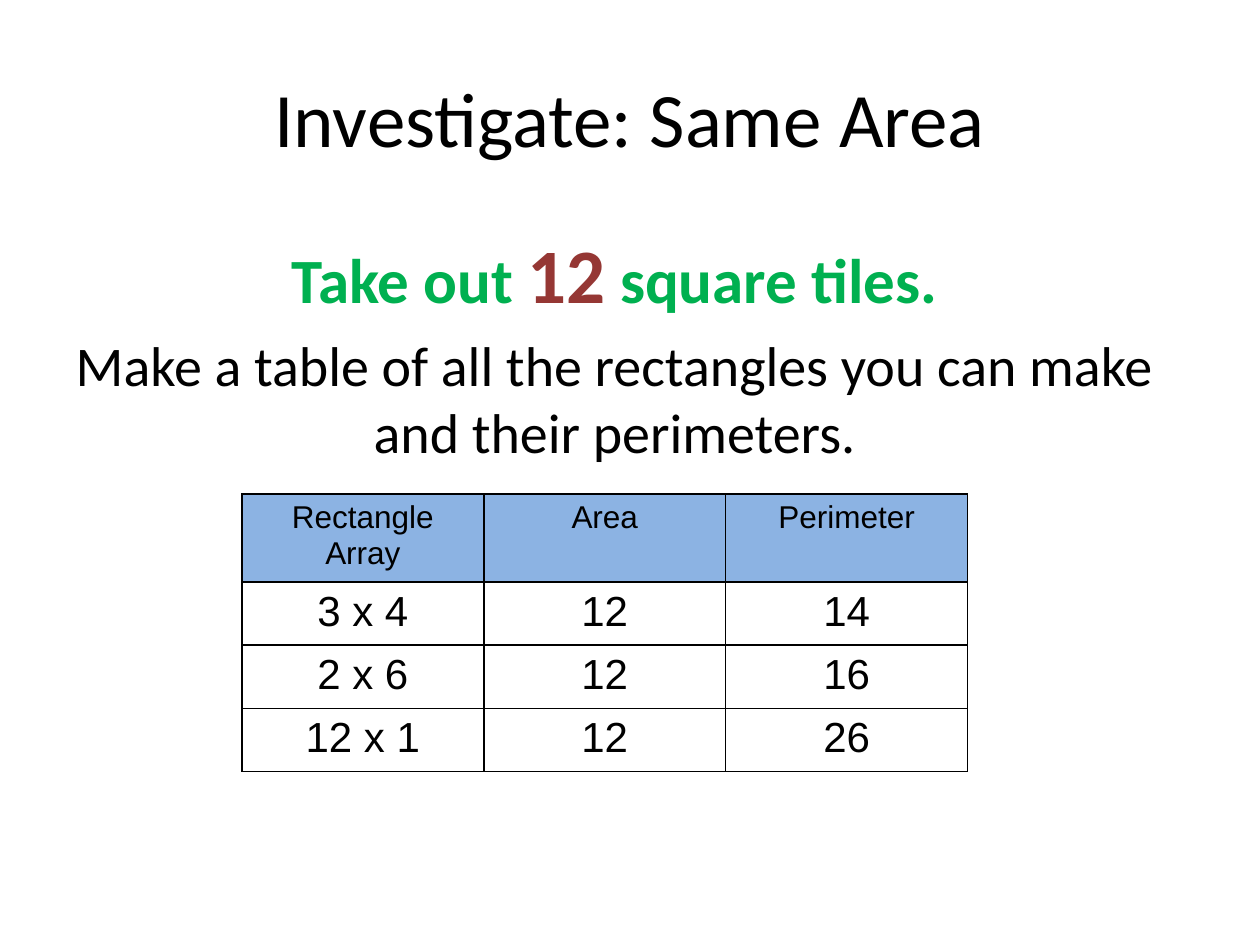
from lxml import etree
from pptx import Presentation
from pptx import util as u
from pptx.dml.color import RGBColor
from pptx.enum import text
from pptx.oxml import ns


def color(value):
    return RGBColor.from_string(value)


def add_run(paragraph, wording, size, font, fill="000000", bold=False):
    paragraph.alignment = text.PP_ALIGN.CENTER
    run = paragraph.add_run()
    run.text = wording
    run.font.size = u.Pt(size)
    run.font.name = font
    run.font.bold = bold
    run.font.color.rgb = color(fill)


presentation = Presentation()
presentation.slide_width = u.Inches(10)
presentation.slide_height = u.Inches(7.5)
slide = presentation.slides.add_slide(presentation.slide_layouts[5])

title = slide.shapes.title
title.left, title.top = u.Inches(0.5), u.Inches(0.3)
title.width, title.height = u.Inches(9), u.Inches(1.25)
title.text_frame.vertical_anchor = text.MSO_ANCHOR.MIDDLE
add_run(title.text_frame.paragraphs[0], "Investigate: Same Area", 44, "Calibri")

body = slide.shapes.add_textbox(u.Inches(0.5), u.Inches(1.75), u.Inches(9), u.Inches(4.95))
body.text_frame.word_wrap = True
task = body.text_frame.paragraphs[0]
task._p.get_or_add_pPr().set("marR", str(u.Inches(0.24)))
add_run(task, "Take out ", 36, "Calibri", "00B050", True)
add_run(task, "12", 44, "Calibri", "953734", True)
add_run(task, " square tiles.", 36, "Calibri", "00B050", True)
instruction = body.text_frame.add_paragraph()
instruction.space_before = u.Pt(6.4)
add_run(instruction, "Make a table of all the rectangles you can make and their perimeters.", 32, "Calibri")

rows = [
    ("Rectangle Array", "Area", "Perimeter"),
    ("3 x 4", "12", "14"),
    ("2 x 6", "12", "16"),
    ("12 x 1", "12", "26"),
]
table = slide.shapes.add_table(
    len(rows), len(rows[0]), u.Inches(1.92), u.Inches(3.92), u.Inches(5.75), u.Inches(2.07)
).table
for column in table.columns:
    column.width = u.Inches(1.92)
for row_index, row in enumerate(rows):
    is_header = row_index == 0
    table.rows[row_index].height = u.Inches(0.66 if is_header else 0.47)
    for column_index, wording in enumerate(row):
        cell = table.cell(row_index, column_index)
        add_run(cell.text_frame.paragraphs[0], wording, 18 if is_header else 24, "Arial")
        properties = cell._tc.get_or_add_tcPr()
        for side in ("lnL", "lnR", "lnT", "lnB"):
            border = etree.SubElement(properties, ns.qn(f"a:{side}"), w=str(u.Pt(1)))
            fill = etree.SubElement(border, ns.qn("a:solidFill"))
            etree.SubElement(fill, ns.qn("a:srgbClr"), val="000000")
        if is_header:
            cell.fill.solid()
            cell.fill.fore_color.rgb = color("8CB3E3")
        else:
            cell.fill.background()

presentation.save("out.pptx")
